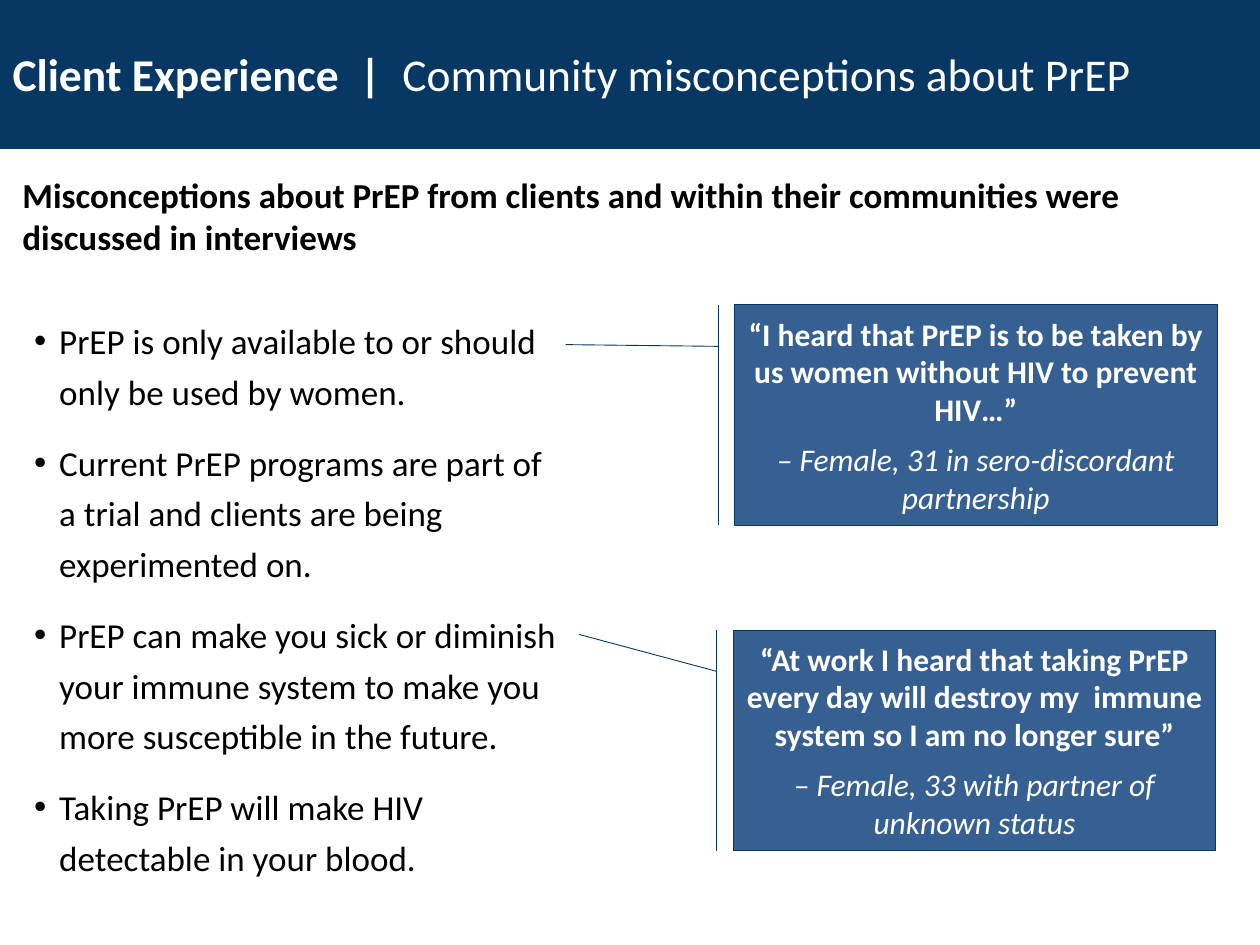
from pptx import Presentation
from pptx.dml.color import RGBColor
from pptx.enum.shapes import MSO_SHAPE
from pptx.enum.text import MSO_ANCHOR, MSO_AUTO_SIZE, PP_ALIGN
from pptx.util import Inches, Pt

NAVY, BLUE, WHITE, BLACK = "073763", "376092", "FFFFFF", "000000"

BELIEFS = [
    "PrEP is only available to or should only be used by women.",
    "Current PrEP programs are part of a trial and clients are being experimented on.",
    "PrEP can make you sick or diminish your immune system to make you "
    "more susceptible in the future.",
    "Taking PrEP will make HIV detectable in your blood.",
]


def color(hex_string):
    return RGBColor.from_string(hex_string)


def write(paragraph, text, size=20, fill=BLACK, bold=False, italic=False,
          align=PP_ALIGN.LEFT, before=0, after=0, spacing=1.0):
    """Append a formatted run and set the spacing of its paragraph."""
    run = paragraph.add_run()
    run.text = text
    font = run.font
    font.name, font.size, font.bold, font.italic = "Calibri", Pt(size), bold, italic
    font.color.rgb = color(fill)
    paragraph.alignment = align
    paragraph.space_before, paragraph.space_after = Pt(before), Pt(after)
    paragraph.line_spacing = spacing


def place(shape, left, top, width, height):
    shape.left, shape.top = Inches(left), Inches(top)
    shape.width, shape.height = Inches(width), Inches(height)


class SlideBuilder:
    def __init__(self, slide):
        self.slide = slide
        self.shapes = slide.shapes

    def box(self, kind, left, top, width, height, fill, line_width):
        shape = self.shapes.add_shape(
            kind, Inches(left), Inches(top), Inches(width), Inches(height))
        shape.shadow.inherit = False
        shape.fill.solid()
        shape.fill.fore_color.rgb = color(fill)
        shape.line.color.rgb = color(NAVY)
        shape.line.width = Pt(line_width)
        return shape

    def header(self, section, topic):
        band = self.box(MSO_SHAPE.RECTANGLE, 0, 0, 10, 1.17, NAVY, 2)
        title = self.shapes.title
        title._element.addprevious(band._element)  # band goes behind the title
        place(title, 0, 0, 9.92, 1.17)
        frame = title.text_frame
        frame.auto_size = MSO_AUTO_SIZE.NONE
        frame.vertical_anchor = MSO_ANCHOR.MIDDLE
        heading = frame.paragraphs[0]
        write(heading, f"{section}  |  ", size=26, fill=WHITE, bold=True)
        write(heading, topic, size=26, fill=WHITE)

    def bullets(self, items, left, top, width, height):
        body = self.slide.placeholders[1]
        place(body, left, top, width, height)
        frame = body.text_frame
        frame.auto_size = MSO_AUTO_SIZE.NONE
        for index, item in enumerate(items):
            paragraph = frame.add_paragraph() if index else frame.paragraphs[0]
            write(paragraph, item, after=12, spacing=1.2)
            properties = paragraph._p.get_or_add_pPr()
            properties.set("marL", str(Inches(0.2)))
            properties.set("indent", str(Inches(-0.2)))

    def statement(self, text, left, top, width, height):
        frame = self.shapes.add_textbox(
            Inches(left), Inches(top), Inches(width), Inches(height)).text_frame
        frame.word_wrap = True
        write(frame.paragraphs[0], text, bold=True)

    def quote(self, words, speaker, left, top, pointer_y, pointer_x):
        """Callout whose pointer ends at a fraction of its height and width."""
        callout = self.box(MSO_SHAPE.LINE_CALLOUT_1_BORDER_AND_ACCENT_BAR,
                           left, top, 3.83, 1.75, BLUE, 0.5)
        for index, value in enumerate((0.188, -0.034, pointer_y, pointer_x)):
            callout.adjustments[index] = value
        frame = callout.text_frame
        frame.word_wrap = True
        frame.vertical_anchor = MSO_ANCHOR.MIDDLE
        style = dict(size=18, fill=WHITE, align=PP_ALIGN.CENTER)
        write(frame.paragraphs[0], words, bold=True, **style)
        write(frame.add_paragraph(), speaker, italic=True, before=7, **style)


def main():
    deck = Presentation()
    deck.slide_width, deck.slide_height = Inches(10), Inches(7.5)
    page = SlideBuilder(deck.slides.add_slide(deck.slide_layouts[1]))
    page.header("Client Experience", "Community misconceptions about PrEP")
    page.bullets(BELIEFS, 0.17, 2.42, 4.42, 4.92)
    page.statement("Misconceptions about PrEP from clients and within their "
                   "communities were discussed in interviews", 0.08, 1.33, 10, 0.77)
    page.quote("“I heard that PrEP is to be taken by us women without HIV to prevent HIV…”",
               "– Female, 31 in sero-discordant partnership", 5.83, 2.42, 0.18, -0.35)
    page.quote("“At work I heard that taking PrEP every day will destroy my  immune "
               "system so I am no longer sure”",
               "– Female, 33 with partner of unknown status", 5.82, 5, 0.02, -0.32)
    deck.save("out.pptx")


if __name__ == "__main__":
    main()
